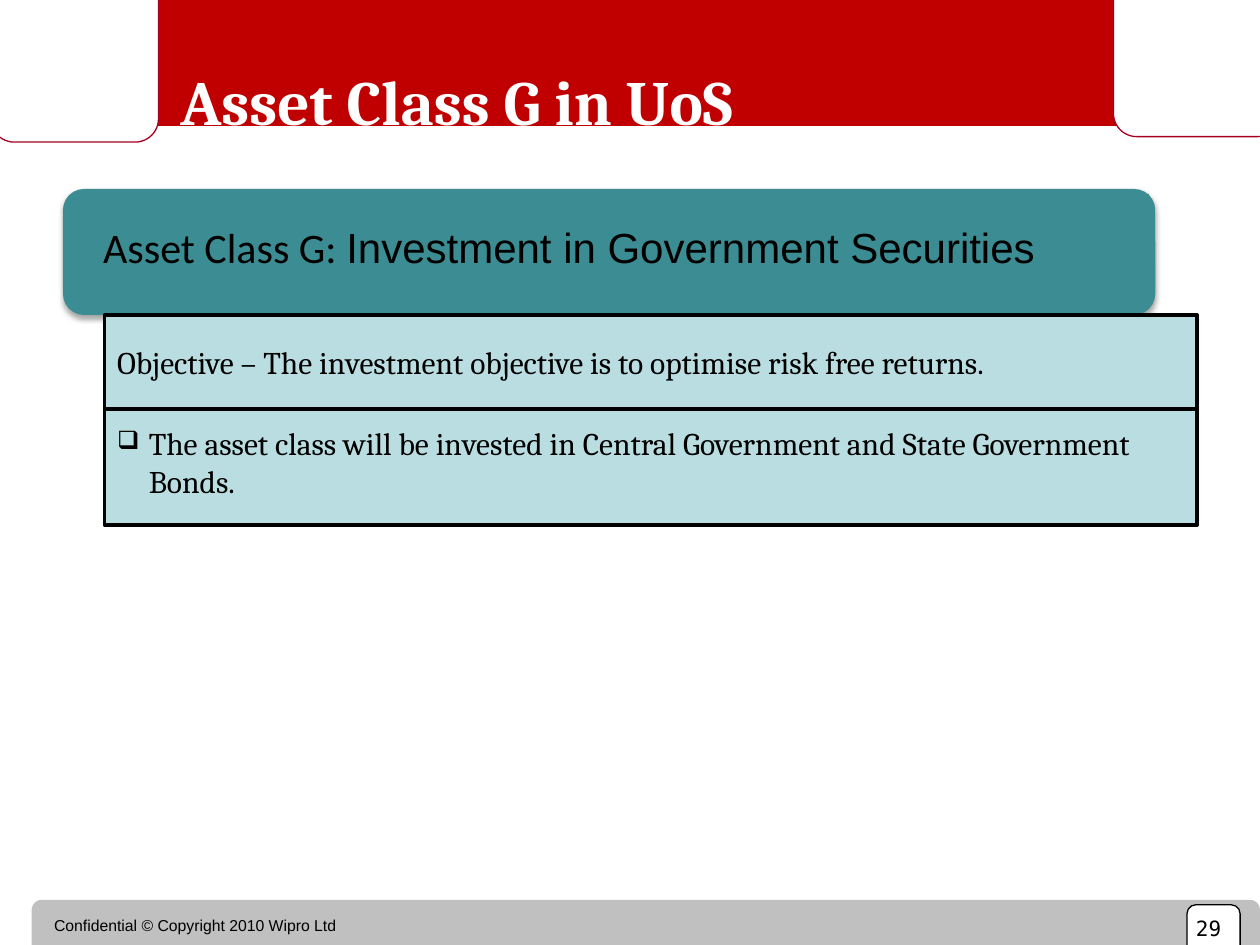
"""Build the Asset Class G slide."""
from lxml.etree import SubElement
from pptx import Presentation
from pptx.dml.color import RGBColor
from pptx.enum.shapes import MSO_SHAPE as Preset
from pptx.enum.text import MSO_ANCHOR as Anchor, MSO_AUTO_SIZE as AutoSize, PP_ALIGN as Align
from pptx.oxml.ns import qn
from pptx.util import Cm, Pt

COLORS = {
    "red": "C00000", "crimson": "A50021", "gray": "C0C0C0", "teal": "3C8C93",
    "pale": "BADDE1", "black": "000000", "white": "FFFFFF",
}
BANNER_CORNER = 0.139
BAR_LEFT, BAR_WIDTH = 2.11, 22.02


class SlideBuilder:
    """Hold the colours and the slide, and add styled elements to it."""

    def __init__(self, slide, colors):
        self.slide = slide
        self.colors = colors

    def color(self, name):
        return RGBColor.from_string(self.colors[name])

    def panel(self, place, fill, line=None, weight=0.75, corner=None, rotation=0):
        preset = Preset.RECTANGLE if corner is None else Preset.ROUNDED_RECTANGLE
        shape = self.slide.shapes.add_shape(preset, *map(Cm, place))
        if corner is not None:
            shape.adjustments[0] = corner
        shape.rotation = rotation
        shape.shadow.inherit = False
        shape.fill.solid()
        shape.fill.fore_color.rgb = self.color(fill)
        if line:
            shape.line.color.rgb = self.color(line)
            shape.line.width = Pt(weight)
        else:
            shape.line.fill.background()
        return shape

    def drop_shadow(self, shape):
        effects = shape._element.spPr.find(qn("a:effectLst"))
        shadow = SubElement(effects, qn("a:outerShdw"), blurRad=str(Pt(3.1)),
                            dist=str(Pt(1.8)), dir="5400000", rotWithShape="0")
        tint = SubElement(shadow, qn("a:srgbClr"), val=self.colors["black"])
        SubElement(tint, qn("a:alpha"), val="35000")

    def fill_text(self, shape, runs, size, color="black", bold=False,
                  align=Align.LEFT, anchor=Anchor.MIDDLE):
        frame = shape.text_frame
        frame.word_wrap = True
        frame.auto_size = AutoSize.NONE
        frame.vertical_anchor = anchor
        para = frame.paragraphs[0]
        para.alignment = align
        for text, font in runs:
            span = para.add_run()
            span.text = text
            span.font.name = font
            span.font.size = Pt(size)
            span.font.bold = bold
            span.font.color.rgb = self.color(color)
        return para

    def title(self, place, text):
        title = self.slide.shapes.title
        title.left, title.top, title.width, title.height = map(Cm, place)
        self.fill_text(title, [(text, "Cambria")], 36, "white", bold=True)
        tree = self.slide.shapes._spTree
        tree.remove(title._element)
        tree.append(title._element)

    def label(self, place, text, font, size, align=Align.LEFT):
        box = self.slide.shapes.add_textbox(*map(Cm, place))
        return self.fill_text(box, [(text, font)], size, align=align, anchor=Anchor.TOP)

    def heading(self, place, runs):
        box = self.panel(place, "teal")
        para = self.fill_text(box, runs, 24)
        para.line_spacing = 0.9
        frame = box.text_frame
        frame.margin_left = frame.margin_right = Cm(0.61)
        frame.margin_top = frame.margin_bottom = 0
        self.hang(para, 4.93)

    def hang(self, para, indent):
        properties = para._p.get_or_add_pPr()
        properties.set("marL", str(Cm(indent)))
        properties.set("indent", str(-Cm(indent)))
        return properties

    def detail(self, top, height, text, bullet=None):
        box = self.panel((BAR_LEFT, top, BAR_WIDTH, height), "pale", "black", 2)
        para = self.fill_text(box, [(text, "Cambria")], 18)
        if bullet:
            properties = self.hang(para, 0.64)
            SubElement(properties, qn("a:buSzPct"), val="80000")
            SubElement(properties, qn("a:buChar"), char=bullet)


def main():
    deck = Presentation()
    deck.slide_width, deck.slide_height = Cm(25.4), Cm(19.05)
    page = SlideBuilder(deck.slides.add_slide(deck.slide_layouts[5]), COLORS)

    page.panel((0.64, -0.53, 25.2, 3.07), "red", corner=BANNER_CORNER)
    page.panel((0.64, 18.14, 24.76, 1.47), "gray", corner=BANNER_CORNER)
    footer = page.label((0.84, 18.42, 10.31, 0.41),
                        "Confidential © Copyright 2010 Wipro Ltd", "Arial", 9)
    footer.line_spacing = 0.75
    page.panel((23.93, 18.24, 1.07, 1.24), "white", "black", corner=0.167)
    page.label((23.7, 18.34, 1.17, 0.58), "29", "DejaVu Sans Mono", 12, Align.RIGHT)
    for left, top in ((22.38, -0.69), (-0.25, -0.58)):
        page.panel((left, top, 3.51, 3.38), "white", "crimson",
                   corner=BANNER_CORNER, rotation=90)

    page.title((3.38, 1.07, 22.02, 1.9), "Asset Class G in UoS")
    band = page.panel((1.27, 3.81, BAR_WIDTH, 2.54), "teal", corner=0.167)
    page.drop_shadow(band)
    page.heading((1.47, 3.91, 21.69, 2.24), [
        ("Asset Class G: ", "Calibri"),
        ("Investment in Government Securities", "Arial"),
    ])
    page.detail(8.05, 2.54, "The asset class will be invested in Central Government "
                "and State Government Bonds.", bullet="❑")
    page.detail(6.35, 1.9, "Objective – The investment objective is to optimise "
                "risk free returns.")
    deck.save("out.pptx")


if __name__ == "__main__":
    main()
